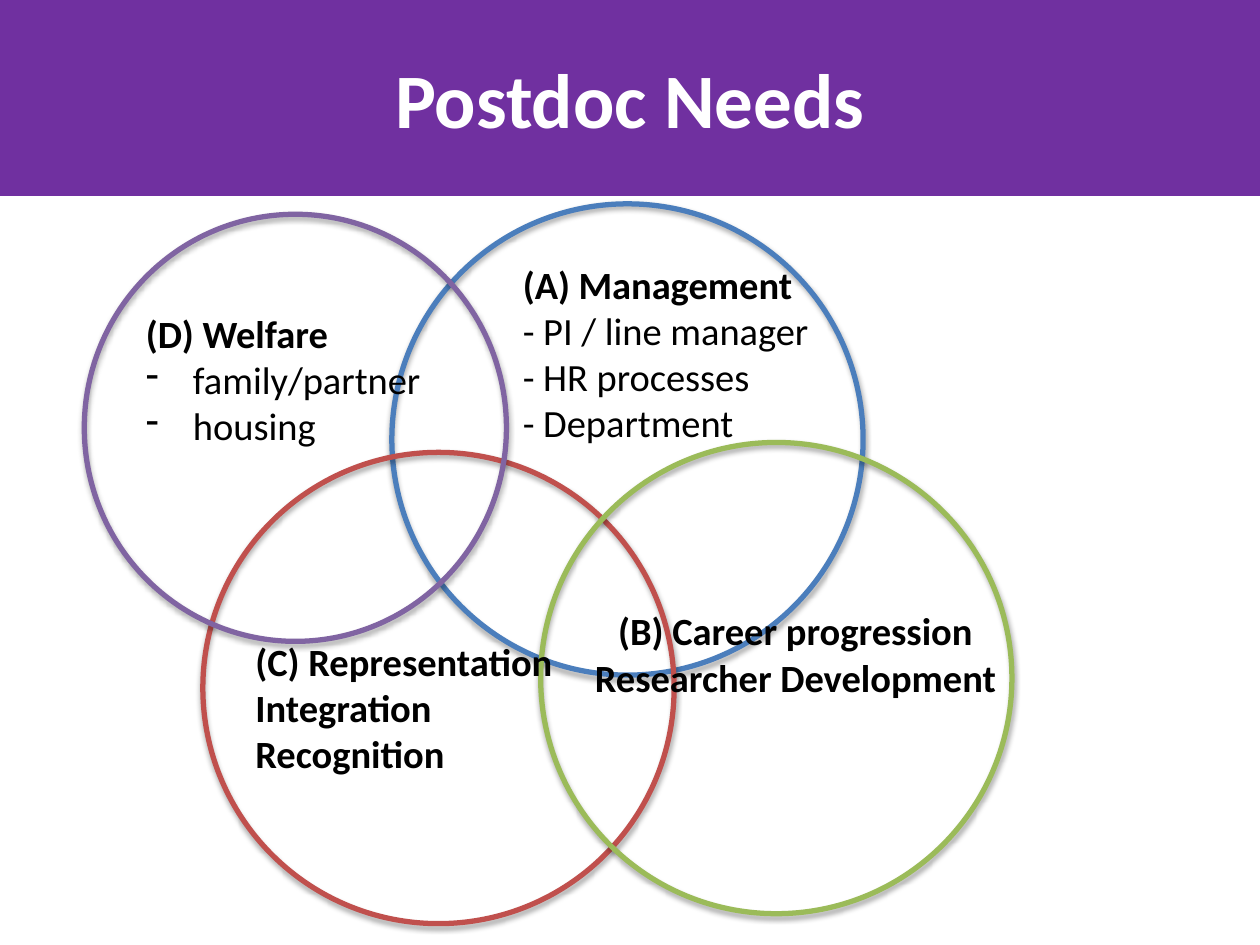
from pptx import Presentation
from pptx.dml.color import RGBColor as RGB
from pptx.enum.shapes import MSO_SHAPE as Shape
from pptx.enum.text import MSO_ANCHOR as Anchor, PP_ALIGN as Align
from pptx.oxml.xmlchemy import OxmlElement as Node
from pptx.util import Cm, Pt

PURPLE = RGB(0x70, 0x30, 0xA0)
WHITE = RGB(0xFF, 0xFF, 0xFF)
BLACK = RGB(0, 0, 0)
BLUE = RGB(0x4B, 0x7E, 0xBC)
RED = RGB(0xC0, 0x50, 0x4D)
GREEN = RGB(0x9B, 0xBB, 0x59)
VIOLET = RGB(0x80, 0x64, 0xA2)


def style(par, size, color, bold):
    font = par.font
    font.name, font.size, font.bold = "Calibri", Pt(size), bold
    font.color.rgb = color


def indent(par, left, first=0, mark=None):
    props = par._p.get_or_add_pPr()
    props.set("marL", str(Cm(left)))
    props.set("indent", str(Cm(first)))
    if mark:
        bullet = Node("a:buChar")
        bullet.set("char", mark)
        props.insert_element_before(bullet, "a:tabLst", "a:defRPr", "a:extLst")


deck = Presentation()
deck.slide_width, deck.slide_height = Cm(25.4), Cm(19.05)
slide = deck.slides.add_slide(deck.slide_layouts[5])

# Title band
title = slide.shapes.title
title.left, title.top, title.width, title.height = Cm(0), Cm(0), Cm(25.4), Cm(3.94)
title.fill.solid()
title.fill.fore_color.rgb = PURPLE
title.line.color.rgb = PURPLE
title.line.width = Pt(0.75)
title.text_frame.text = "Postdoc Needs"
title.text_frame.vertical_anchor = Anchor.MIDDLE
style(title.text_frame.paragraphs[0], 44, WHITE, True)

# Overlapping circles, with the theme's soft shadow
circles = [
    (7.9, 4.11, 9.5, 9.5, BLUE),
    (4.09, 9.12, 9.5, 9.5, RED),
    (10.9, 8.92, 9.5, 9.5, GREEN),
    (1.7, 4.32, 8.51, 8.61, VIOLET),
]
for left, top, width, height, color in circles:
    ring = slide.shapes.add_shape(
        Shape.OVAL, Cm(left), Cm(top), Cm(width), Cm(height))
    ring.fill.background()
    ring.line.color.rgb = color
    ring.line.width = Pt(3)

# Labels: box, alignment, left indent, paragraphs of (text, bold, bullet)
labels = [
    (4.9, 12.73, 7.01, 3.84, Align.LEFT, 0,
     [("(C) Representation\vIntegration", True, None),
      ("Recognition", True, None)]),
    (11.3, 12.12, 9.19, 2.9, Align.CENTER, 0.28,
     [("(B) Career progression", True, None),
      ("Researcher Development", True, None)]),
    (9.3, 5.13, 7.39, 5.56, Align.LEFT, 0.99,
     [("(A) Management\v- PI / line manager", False, None),
      ("- HR processes\v- Department", False, None)]),
    (1.7, 6.12, 7.59, 5.56, Align.LEFT, 0.99,
     [("(D) Welfare", True, None),
      ("family/partner", False, "-"),
      ("housing", False, "-")]),
]
for left, top, width, height, align, inset, lines in labels:
    box = slide.shapes.add_textbox(Cm(left), Cm(top), Cm(width), Cm(height))
    frame = box.text_frame
    frame.word_wrap = True
    for i, (text, bold, mark) in enumerate(lines):
        par = frame.add_paragraph() if i else frame.paragraphs[0]
        par.text = text
        par.alignment = align
        style(par, 22, BLACK, bold)
        if mark:
            indent(par, inset + 0.95, -0.95, mark)
        else:
            indent(par, inset)
    # The heading is always bold
    frame.paragraphs[0].runs[0].font.bold = True

deck.save("out.pptx")
